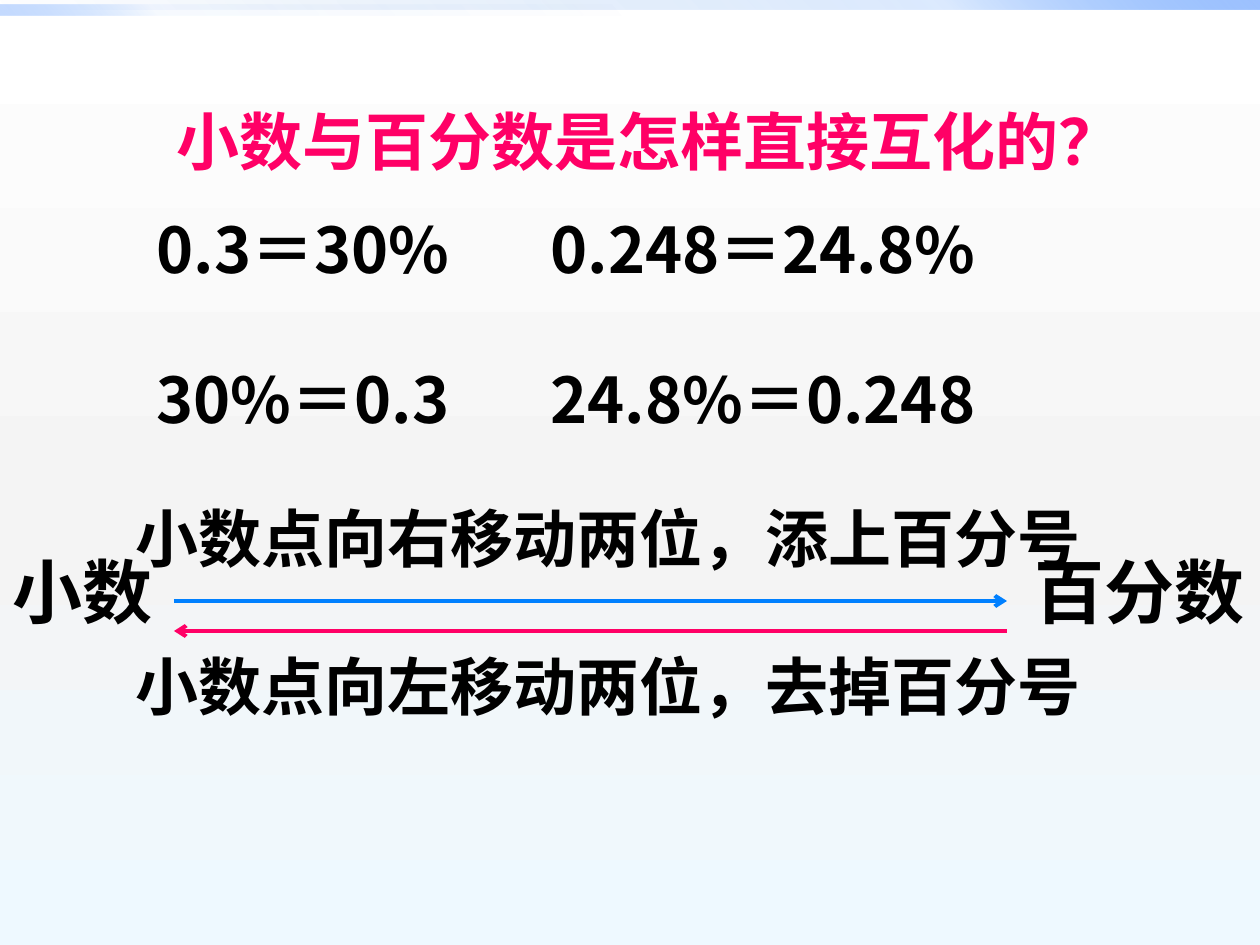
from lxml.etree import SubElement
from pptx import Presentation
from pptx.dml.color import RGBColor
from pptx.enum.shapes import MSO_CONNECTOR, MSO_SHAPE
from pptx.enum.text import MSO_ANCHOR, MSO_AUTO_SIZE, PP_ALIGN
from pptx.oxml.ns import qn
from pptx.util import Pt

EMU_PER_PX = 914400 / 126
SLIDE_SIZE = (1260, 945)
SANS, SERIF = "Noto Sans CJK SC", "Times New Roman"
COLORS = {
    "text": "000000", "pink": "FF0066", "blue": "0080FF",
    "white": "FFFFFF", "gray": "F4F4F4", "ice": "EEF9FF",
    "deep": "0058B7", "mid": "4F95FF", "pale": "9EC2FF",
}

# Gradient stops: position %, color, opacity %
BACKGROUND = [(0, "white", 100), (55, "gray", 100), (100, "ice", 100)]
# Top bars: box, stops, angle
TOP_BARS = [
    ((0, 0, 1260, 10), [(0, "deep", 0), (75, "mid", 20), (100, "pale", 100)], 315),
    ((0, 5, 630, 10), [(0, "deep", 0), (75, "mid", 5), (100, "pale", 60)], 135),
]
TITLE = ("小数与百分数是怎样直接互化的？", (164, 96, 984, 88))
EQUATIONS = [
    (("0.3＝30%", "0.248＝24.8%"), (144, 204, 1042, 88)),
    (("30%＝0.3", "24.8%＝0.248"), (144, 354, 912, 88)),
]
EQUATION_TAB = 394
# Labels: text, box, size, font
LABELS = [
    ("小数", (0, 542, 166, 97), 40, SANS),
    ("百分数", (1022, 542, 236, 97), 40, SANS),
    ("小数点向右移动两位，添上百分号", (123, 493, 974, 88), 36, SERIF),
    ("小数点向左移动两位，去掉百分号", (123, 641, 974, 88), 36, SERIF),
]
# Arrows: start x, end x, y, color
ARROWS = [(174, 1007, 601, "blue"), (1007, 174, 631, "pink")]


def px(value):
    return round(value * EMU_PER_PX)


def rgb(name):
    return RGBColor.from_string(COLORS[name])


def set_gradient(fill, owner, stops, angle):
    """Swap the owner's solid fill for a linear gradient with opacity."""
    fill.solid()
    solid = owner.find(".//" + qn("a:solidFill"))
    gradient = solid.makeelement(qn("a:gradFill"), {"rotWithShape": "1"})
    stop_list = SubElement(gradient, qn("a:gsLst"))
    for position, color, opacity in stops:
        stop = SubElement(stop_list, qn("a:gs"), pos=str(position * 1000))
        value = SubElement(stop, qn("a:srgbClr"), val=COLORS[color])
        if opacity < 100:
            SubElement(value, qn("a:alpha"), val=str(opacity * 1000))
    SubElement(gradient, qn("a:lin"), ang=str(angle * 60000), scaled="0")
    solid.getparent().replace(solid, gradient)


def write_text(shape, text, size=36, font_name=SANS, color="text", wrap=True, tab=None):
    frame = shape.text_frame
    frame.word_wrap = wrap
    frame.auto_size = MSO_AUTO_SIZE.SHAPE_TO_FIT_TEXT
    frame.vertical_anchor = MSO_ANCHOR.TOP
    frame.text = text
    paragraph = frame.paragraphs[0]
    paragraph.alignment = PP_ALIGN.LEFT
    properties = paragraph._p.get_or_add_pPr()
    if tab:
        tabs = SubElement(properties, qn("a:tabLst"))
        SubElement(tabs, qn("a:tab"), pos=str(px(tab)), algn="l")
    font = paragraph.font
    font.size, font.bold, font.name = Pt(size), True, font_name
    font.color.rgb = rgb(color)
    SubElement(properties.find(qn("a:defRPr")), qn("a:ea"), typeface=SANS)


def add_bar(slide, box, stops, angle):
    bar = slide.shapes.add_shape(MSO_SHAPE.RECTANGLE, *map(px, box))
    bar.shadow.inherit = False
    bar.line.fill.background()
    set_gradient(bar.fill, bar._element, stops, angle)


def add_arrow(slide, start, end, y, color):
    arrow = slide.shapes.add_connector(
        MSO_CONNECTOR.STRAIGHT, px(start), px(y), px(end), px(y))
    arrow.line.color.rgb = rgb(color)
    arrow.line.width = Pt(2.25)
    SubElement(arrow.line._get_or_add_ln(), qn("a:tailEnd"), type="arrow")
    SubElement(arrow._element.spPr, qn("a:effectLst"))


def main():
    presentation = Presentation()
    presentation.slide_width, presentation.slide_height = map(px, SLIDE_SIZE)
    slide = presentation.slides.add_slide(presentation.slide_layouts[5])
    set_gradient(slide.background.fill, slide._element, BACKGROUND, 90)

    for bar in TOP_BARS:
        add_bar(slide, *bar)

    text, box = TITLE
    title = slide.shapes.title
    title.left, title.top, title.width, title.height = map(px, box)
    write_text(title, text, color="pink")

    for pair, box in EQUATIONS:
        textbox = slide.shapes.add_textbox(*map(px, box))
        write_text(textbox, "\t".join(pair), tab=EQUATION_TAB)
    for text, box, size, font_name in LABELS:
        textbox = slide.shapes.add_textbox(*map(px, box))
        write_text(textbox, text, size, font_name, wrap=False)
    for arrow in ARROWS:
        add_arrow(slide, *arrow)

    presentation.save("out.pptx")


if __name__ == "__main__":
    main()
